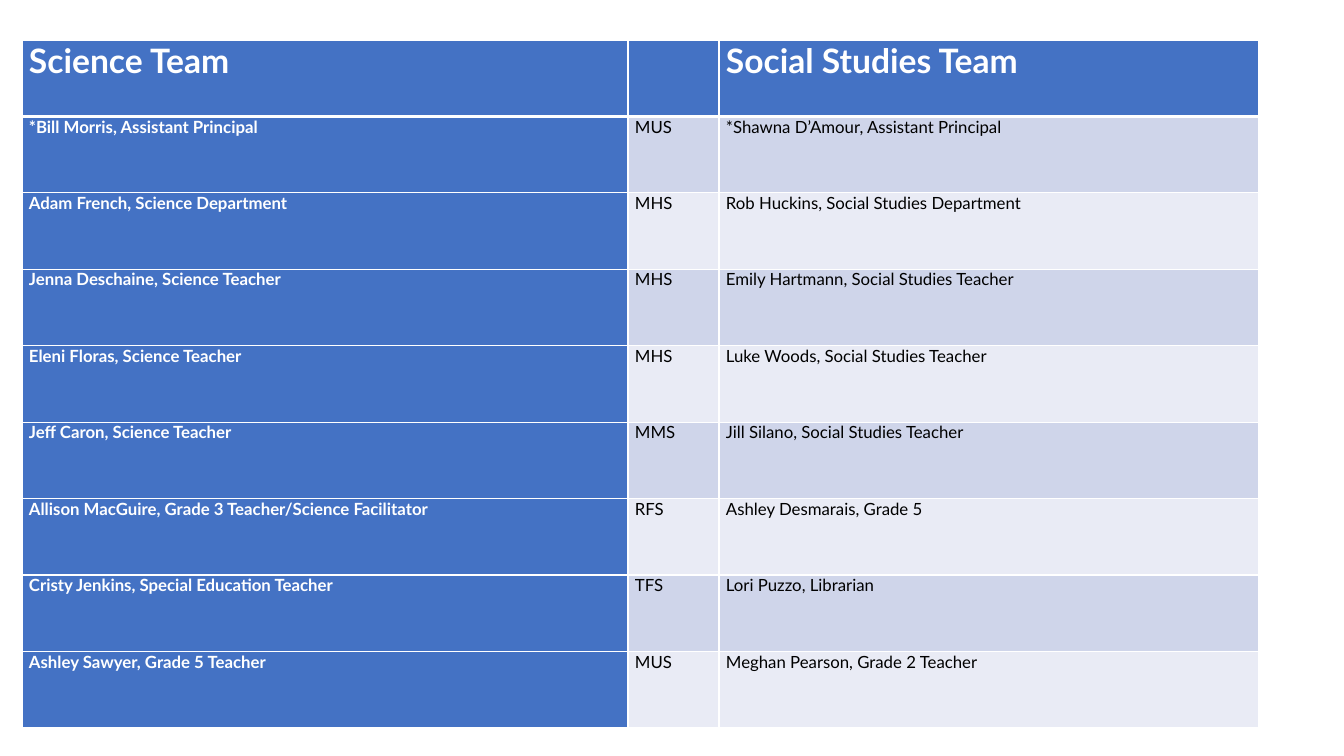
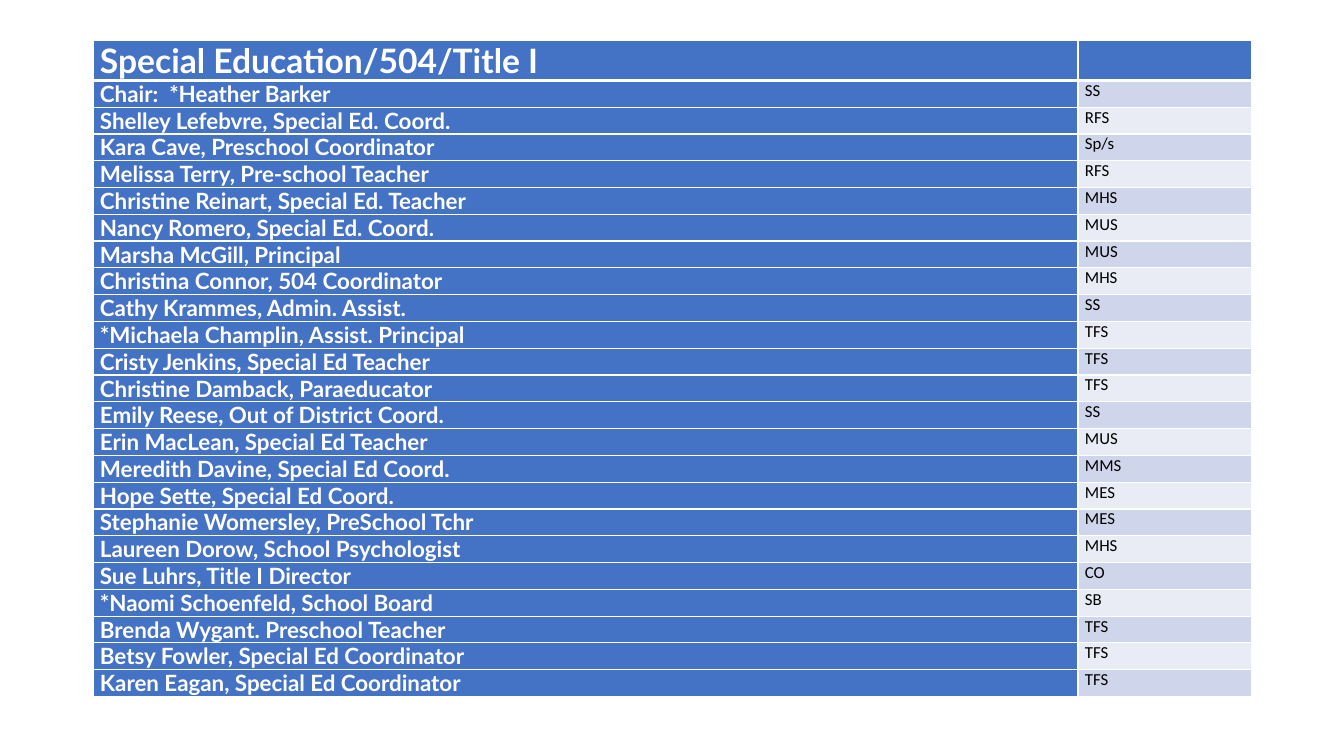
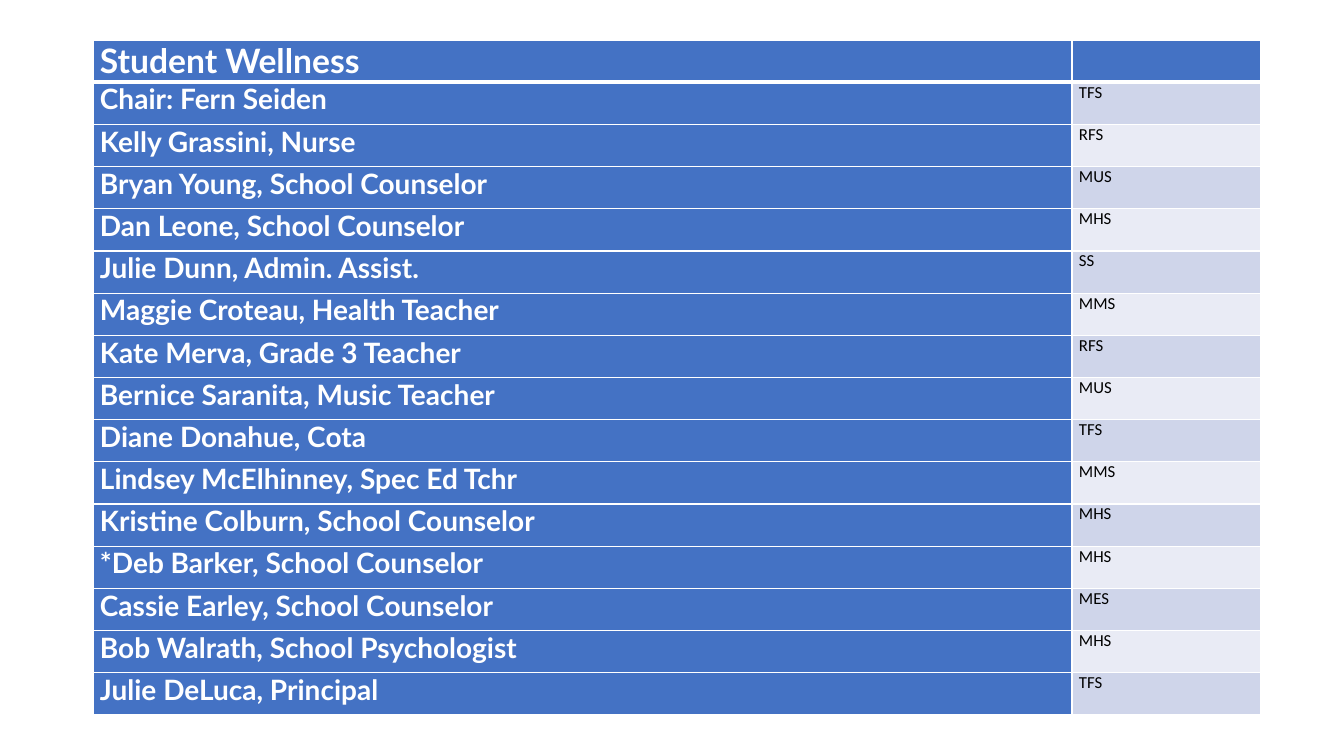
from lxml.etree import SubElement
from pptx import Presentation
from pptx.dml.color import RGBColor
from pptx.oxml.ns import qn
from pptx.util import Pt

EMU_PER_PX = 914400 / 100.8
BLUE, WHITE, BLACK = "4472C4", "FFFFFF", "000000"
BANDS = ("CFD5EA", "E9EBF5")
NAME_FONT, PLAIN_FONT = "Lato", "Calibri"
TITLE_SIZE, CODE_SIZE = 24, 12
INSET = 7

SUBJECT_ROWS = [
    ("Science Team", "", "Social Studies Team"),
    ("*Bill Morris, Assistant Principal", "MUS", "*Shawna D’Amour, Assistant Principal"),
    ("Adam French, Science Department", "MHS", "Rob Huckins, Social Studies Department"),
    ("Jenna Deschaine, Science Teacher", "MHS", "Emily Hartmann, Social Studies Teacher"),
    ("Eleni Floras, Science Teacher", "MHS", "Luke Woods, Social Studies Teacher"),
    ("Jeff Caron, Science Teacher", "MMS", "Jill Silano, Social Studies Teacher"),
    ("Allison MacGuire, Grade 3 Teacher/Science Facilitator", "RFS", "Ashley Desmarais, Grade 5"),
    ("Cristy Jenkins, Special Education Teacher", "TFS", "Lori Puzzo, Librarian"),
    ("Ashley Sawyer, Grade 5 Teacher", "MUS", "Meghan Pearson, Grade 2 Teacher"),
]
SPECIAL_ED_ROWS = [
    ("Special Education/504/Title I", ""),
    ("Chair:  *Heather Barker", "SS"),
    ("Shelley Lefebvre, Special Ed. Coord.", "RFS"),
    ("Kara Cave, Preschool Coordinator", "Sp/s"),
    ("Melissa Terry, Pre-school Teacher", "RFS"),
    ("Christine Reinart, Special Ed. Teacher", "MHS"),
    ("Nancy Romero, Special Ed. Coord.", "MUS"),
    ("Marsha McGill, Principal", "MUS"),
    ("Christina Connor, 504 Coordinator", "MHS"),
    ("Cathy Krammes, Admin. Assist.", "SS"),
    ("*Michaela Champlin, Assist. Principal", "TFS"),
    ("Cristy Jenkins, Special Ed Teacher", "TFS"),
    ("Christine Damback, Paraeducator", "TFS"),
    ("Emily Reese, Out of District Coord.", "SS"),
    ("Erin MacLean, Special Ed Teacher", "MUS"),
    ("Meredith Davine, Special Ed Coord.", "MMS"),
    ("Hope Sette, Special Ed Coord.", "MES"),
    ("Stephanie Womersley, PreSchool Tchr", "MES"),
    ("Laureen Dorow, School Psychologist", "MHS"),
    ("Sue Luhrs, Title I Director", "CO"),
    ("*Naomi Schoenfeld, School Board", "SB"),
    ("Brenda Wygant. Preschool Teacher", "TFS"),
    ("Betsy Fowler, Special Ed Coordinator", "TFS"),
    ("Karen Eagan, Special Ed Coordinator", "TFS"),
]
WELLNESS_ROWS = [
    ("Student Wellness", ""),
    ("Chair: Fern Seiden", "TFS"),
    ("Kelly Grassini, Nurse", "RFS"),
    ("Bryan Young, School Counselor", "MUS"),
    ("Dan Leone, School Counselor", "MHS"),
    ("Julie Dunn, Admin. Assist.", "SS"),
    ("Maggie Croteau, Health Teacher", "MMS"),
    ("Kate Merva, Grade 3 Teacher", "RFS"),
    ("Bernice Saranita, Music Teacher", "MUS"),
    ("Diane Donahue, Cota", "TFS"),
    ("Lindsey McElhinney, Spec Ed Tchr", "MMS"),
    ("Kristine Colburn, School Counselor", "MHS"),
    ("*Deb Barker, School Counselor", "MHS"),
    ("Cassie Earley, School Counselor", "MES"),
    ("Bob Walrath, School Psychologist", "MHS"),
    ("Julie DeLuca, Principal", "TFS"),
]


def px(n):
    return round(n * EMU_PER_PX)


def rgb(color):
    return RGBColor.from_string(color)


def set_borders(cell, top, bottom):
    """White rules round a cell; widths in points. Call before the fill is set."""
    tc_pr = cell._tc.get_or_add_tcPr()
    for side, width in (("L", 1), ("R", 1), ("T", top), ("B", bottom)):
        ln = SubElement(tc_pr, qn(f"a:ln{side}"), w=str(Pt(width)))
        fill = SubElement(ln, qn("a:solidFill"))
        SubElement(fill, qn("a:srgbClr"), val=WHITE)


def fill_cell(cell, text, fill, font, size, color, bold):
    cell.fill.solid()
    cell.fill.fore_color.rgb = rgb(fill)
    cell.margin_left = cell.margin_right = px(INSET)
    cell.margin_top = cell.margin_bottom = 0
    if text:
        r = cell.text_frame.paragraphs[0].add_run()
        r.text = text
        r.font.name, r.font.size, r.font.bold = font, Pt(size), bold
        r.font.color.rgb = rgb(color)


def add_roster(prs, rows, left, top, height, widths, name_size, code_font):
    """One slide with a team table: header row, bold first column, banded rest."""
    s = prs.slides.add_slide(prs.slide_layouts[6])
    frame = s.shapes.add_table(len(rows), len(widths), px(left), px(top),
                               px(sum(widths)), px(height))
    table = frame.table
    for column, width in zip(table.columns, widths):
        column.width = px(width)
    for i, row in enumerate(rows):
        for j, text in enumerate(row):
            cell = table.cell(i, j)
            set_borders(cell, top=3 if i == 1 else 1, bottom=3 if i == 0 else 1)
            if i == 0:
                fill_cell(cell, text, BLUE, NAME_FONT, TITLE_SIZE, WHITE, True)
            elif j == 0:
                fill_cell(cell, text, BLUE, NAME_FONT, name_size, WHITE, True)
            else:
                fill_cell(cell, text, BANDS[(i - 1) % 2], code_font, CODE_SIZE, BLACK, False)


def main():
    prs = Presentation()
    prs.slide_width, prs.slide_height = px(1344), px(756)
    add_roster(prs, SUBJECT_ROWS, 22, 40, 688, (606, 91, 540), 12, NAME_FONT)
    add_roster(prs, SPECIAL_ED_ROWS, 93, 40, 643, (985, 174), 16, PLAIN_FONT)
    add_roster(prs, WELLNESS_ROWS, 93, 40, 675, (979, 189), 20, PLAIN_FONT)
    prs.save("out.pptx")


if __name__ == "__main__":
    main()
